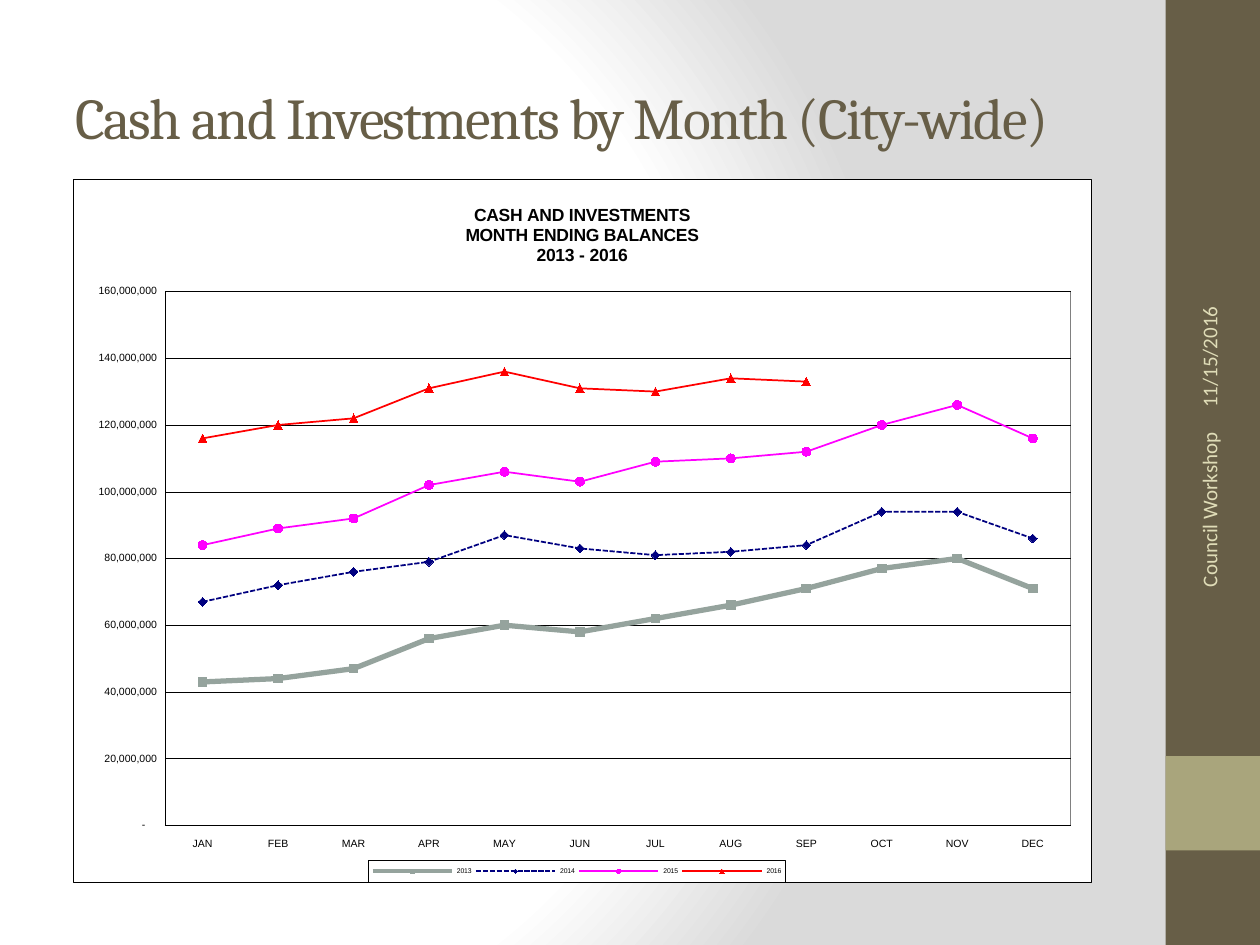
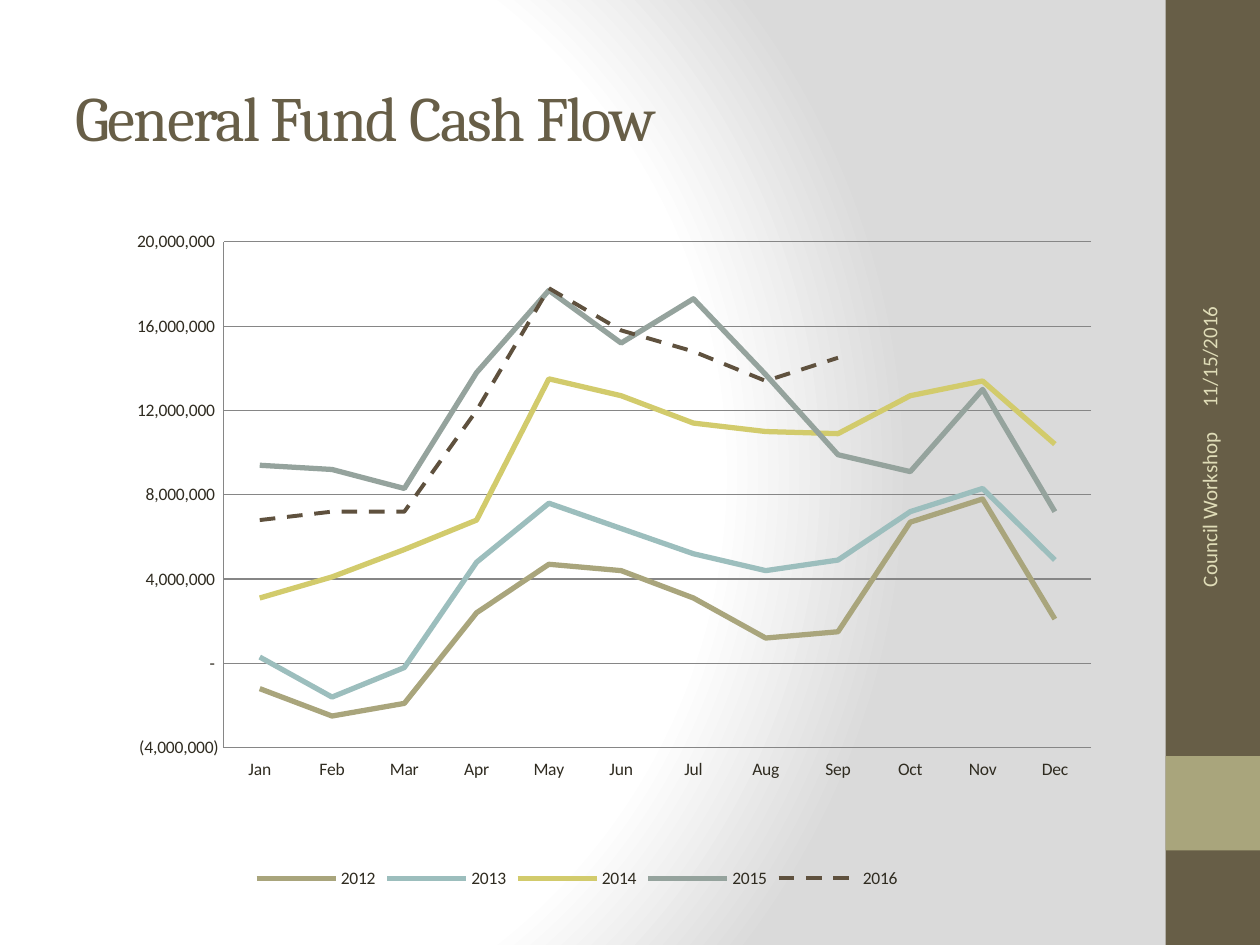
"""Builds two slides of city cash balances as line charts."""
from lxml import etree
from pptx import Presentation
from pptx.chart.data import CategoryChartData
from pptx.dml.color import RGBColor
from pptx.enum.chart import (XL_CHART_TYPE, XL_LEGEND_POSITION, XL_MARKER_STYLE,
                             XL_TICK_LABEL_POSITION, XL_TICK_MARK)
from pptx.enum.dml import MSO_LINE
from pptx.enum.shapes import MSO_SHAPE
from pptx.enum.text import MSO_ANCHOR, PP_ALIGN
from pptx.oxml.ns import qn
from pptx.util import Inches, Pt

BOTTOM = XL_LEGEND_POSITION.BOTTOM
LOW = XL_TICK_LABEL_POSITION.LOW
NO_TICK = XL_TICK_MARK.NONE
SHORT_DASH, DASH = MSO_LINE.SQUARE_DOT, MSO_LINE.DASH
SQUARE, DIAMOND = XL_MARKER_STYLE.SQUARE, XL_MARKER_STYLE.DIAMOND
CIRCLE, TRIANGLE = XL_MARKER_STYLE.CIRCLE, XL_MARKER_STYLE.TRIANGLE
MILLION = 1_000_000

BROWN, OLIVE, CREAM, INK = "675E47", "A9A57C", "DFDCB7", "2F2B20"
SAGE, BLACK, GRAY = "95A39D", "000000", "868686"
MONTHS = ["Jan", "Feb", "Mar", "Apr", "May", "Jun",
          "Jul", "Aug", "Sep", "Oct", "Nov", "Dec"]
BACKDROP_STOPS = [(0, "FFFFFF"), (75, "FFFFFF"), (100, "DADADA")]
BANDS = [((9.25, 0, 0.75, 7.5), BROWN), ((9.25, 6, 0.75, 0.75), OLIVE)]
SIDE_NOTES = [("11/15/2016", (8.26, 1.8, 2.67, 0.4), PP_ALIGN.LEFT),
              ("Council Workshop", (8.3, 4.43, 2.59, 0.4), PP_ALIGN.RIGHT)]

SLIDES = [
    {
        "title": "Cash and Investments by Month (City-wide)", "title_size": 33,
        "at": (0.58, 1.42, 8.08, 5.58), "type": XL_CHART_TYPE.LINE_MARKERS,
        "months": [month.upper() for month in MONTHS],
        "heading": ["CASH AND INVESTMENTS", "MONTH ENDING BALANCES", "2013 - 2016"],
        "font": "Arial", "color": BLACK, "size": 6, "legend_size": 3.9,
        "scale": (0, 160, 20), "grid": (BLACK, 0.25),
        "format": r'_(* #,##0_);_(* \(#,##0\);_(* "-"??_);_(@_)',
        "plot": (0.09, 0.16, 0.89, 0.76), "legend": (0.29, 0.97, 0.41, 0.03),
        "framed": True,
        "series": [
            ("2013", SAGE, 3, None, SQUARE,
             [43, 44, 47, 56, 60, 58, 62, 66, 71, 77, 80, 71]),
            ("2014", "000080", 1, SHORT_DASH, DIAMOND,
             [67, 72, 76, 79, 87, 83, 81, 82, 84, 94, 94, 86]),
            ("2015", "FF00FF", 1, None, CIRCLE,
             [84, 89, 92, 102, 106, 103, 109, 110, 112, 120, 126, 116]),
            ("2016", "FF0000", 1, None, TRIANGLE,
             [116, 120, 122, 131, 136, 131, 130, 134, 133]),
        ],
    },
    {
        "title": "General Fund Cash Flow", "title_size": 36,
        "at": (0.33, 1.59, 8.5, 5.5), "type": XL_CHART_TYPE.LINE,
        "months": MONTHS, "heading": [],
        "font": "Calibri", "color": INK, "size": 10, "legend_size": 10,
        "scale": (-4, 20, 4), "grid": (GRAY, 0.75),
        "format": r'_(* #,##0_);_(* \(#,##0\);_(* "-"_);_(@_)',
        "plot": (0.17, 0.06, 0.81, 0.73), "legend": None, "framed": False,
        "series": [
            ("2012", OLIVE, 3, None, None,
             [-1.2, -2.5, -1.9, 2.4, 4.7, 4.4, 3.1, 1.2, 1.5, 6.7, 7.8, 2.1]),
            ("2013", "9CBEBD", 3, None, None,
             [0.3, -1.6, -0.2, 4.8, 7.6, 6.4, 5.2, 4.4, 4.9, 7.2, 8.3, 4.9]),
            ("2014", "D2CB6C", 3, None, None,
             [3.1, 4.1, 5.4, 6.8, 13.5, 12.7, 11.4, 11, 10.9, 12.7, 13.4, 10.4]),
            ("2015", SAGE, 3, None, None,
             [9.4, 9.2, 8.3, 13.8, 17.7, 15.2, 17.3, 13.7, 9.9, 9.1, 13, 7.2]),
            ("2016", "5F513E", 2.25, DASH, None,
             [6.8, 7.2, 7.2, 12, 17.8, 15.8, 14.8, 13.4, 14.5]),
        ],
    },
]


def rgb(color):
    return RGBColor.from_string(color)


def style_font(font, name, size, color, bold=False):
    font.name, font.size, font.bold = name, Pt(size), bold
    font.color.rgb = rgb(color)


def style_line(line, color, width):
    line.color.rgb = rgb(color)
    line.width = Pt(width)


def add_node(parent, tag, **attributes):
    return etree.SubElement(parent, qn(tag), attributes)


def paint_backdrop(page):
    page.background.fill.solid()
    holder = page.element.find(".//" + qn("p:bgPr"))
    holder.remove(holder[0])
    gradient = etree.Element(qn("a:gradFill"), rotWithShape="1")
    stops = add_node(gradient, "a:gsLst")
    for position, color in BACKDROP_STOPS:
        stop = add_node(stops, "a:gs", pos=str(position * 1000))
        add_node(stop, "a:srgbClr", val=color)
    route = add_node(gradient, "a:path", path="circle")
    add_node(route, "a:fillToRect", l="20000", t="50000", r="100000", b="50000")
    holder.insert(0, gradient)


def add_text(page, text, at, font, size, color, align=PP_ALIGN.LEFT):
    box = page.shapes.add_textbox(*map(Inches, at))
    frame = box.text_frame
    frame.word_wrap = True
    frame.vertical_anchor = MSO_ANCHOR.MIDDLE
    para = frame.paragraphs[0]
    para.alignment = align
    span = para.add_run()
    span.text = text
    style_font(span.font, font, size, color)
    return box, span


def add_frame(page, title, size):
    paint_backdrop(page)
    for at, color in BANDS:
        band = page.shapes.add_shape(MSO_SHAPE.RECTANGLE, *map(Inches, at))
        band.shadow.inherit = False
        band.fill.solid()
        band.fill.fore_color.rgb = rgb(color)
        band.line.fill.background()
    box, span = add_text(page, title, (0.5, 0.3, 8.33, 1.25), "Cambria", size, BROWN)
    span.font._element.set("spc", "-100")
    for text, at, align in SIDE_NOTES:
        box, span = add_text(page, text, at, "Calibri", 12, CREAM, align)
        box.rotation = 270


def make_layout(rect, inner):
    layout = etree.Element(qn("c:layout"))
    manual = add_node(layout, "c:manualLayout")
    if inner:
        add_node(manual, "c:layoutTarget", val="inner")
    for tag in ("c:xMode", "c:yMode"):
        add_node(manual, tag, val="edge")
    for key, value in zip("xywh", rect):
        add_node(manual, "c:" + key, val=str(value))
    return layout


def make_border(color, fill=None):
    border = etree.Element(qn("c:spPr"))
    if fill:
        add_node(add_node(border, "a:solidFill"), "a:srgbClr", val=fill)
    else:
        add_node(border, "a:noFill")
    line = add_node(border, "a:ln", w=str(Pt(0.25)))
    add_node(add_node(line, "a:solidFill"), "a:srgbClr", val=color)
    return border


def drop_layout(parent):
    for old in parent.findall(qn("c:layout")):
        parent.remove(old)


def arrange_chart(chart, item):
    space = chart.element
    plot_area = space.find(".//" + qn("c:plotArea"))
    drop_layout(plot_area)
    plot_area.insert(0, make_layout(item["plot"], True))
    legend = chart.legend._element
    if item["legend"]:
        drop_layout(legend)
        legend.find(qn("c:legendPos")).addnext(make_layout(item["legend"], False))
    if item["framed"]:
        plot_area.append(make_border("808080"))
        legend.find(qn("c:overlay")).addnext(make_border(BLACK))
        space.find(qn("c:chart")).addnext(make_border(BLACK, "FFFFFF"))


def style_axes(chart, item):
    for axis in (chart.category_axis, chart.value_axis):
        axis.major_tick_mark = axis.minor_tick_mark = NO_TICK
        style_font(axis.tick_labels.font, item["font"], item["size"], item["color"])
        style_line(axis.format.line, *item["grid"])
    chart.category_axis.tick_label_position = LOW
    values = chart.value_axis
    values.minimum_scale, values.maximum_scale, values.major_unit = (
        number * MILLION for number in item["scale"])
    values.has_major_gridlines = True
    style_line(values.major_gridlines.format.line, *item["grid"])
    values.tick_labels.number_format = item["format"]
    values.tick_labels.number_format_is_linked = False


def style_series(series, color, width, dash, marker):
    series.smooth = False
    style_line(series.format.line, color, width)
    if dash is not None:
        series.format.line.dash_style = dash
    series.marker.style = XL_MARKER_STYLE.NONE if marker is None else marker
    if marker is not None:
        series.marker.size = 5
        series.marker.format.fill.solid()
        series.marker.format.fill.fore_color.rgb = rgb(color)
        style_line(series.marker.format.line, color, 0.75)


def add_balance_chart(page, item):
    data = CategoryChartData()
    data.categories = item["months"]
    for name, *look, amounts in item["series"]:
        gaps = [None] * (len(MONTHS) - len(amounts))
        data.add_series(name, [round(amount * MILLION) for amount in amounts] + gaps)
    chart = page.shapes.add_chart(item["type"], *map(Inches, item["at"]), data).chart
    style_font(chart.font, item["font"], item["size"], item["color"])
    chart.has_title = bool(item["heading"])
    if item["heading"]:
        frame = chart.chart_title.text_frame
        for index, text in enumerate(item["heading"]):
            para = frame.add_paragraph() if index else frame.paragraphs[0]
            span = para.add_run()
            span.text = text
            style_font(span.font, item["font"], 10, item["color"], True)
    chart.has_legend = True
    chart.legend.position = BOTTOM
    chart.legend.include_in_layout = False
    style_font(chart.legend.font, item["font"], item["legend_size"], item["color"])
    style_axes(chart, item)
    plot = chart.plots[0]
    plot.vary_by_categories = False
    for series, (name, *look, amounts) in zip(plot.series, item["series"]):
        style_series(series, *look)
    arrange_chart(chart, item)


def main():
    deck = Presentation()
    deck.slide_width, deck.slide_height = Inches(10), Inches(7.5)
    for item in SLIDES:
        page = deck.slides.add_slide(deck.slide_layouts[6])
        add_frame(page, item["title"], item["title_size"])
        add_balance_chart(page, item)
    deck.save("out.pptx")


if __name__ == "__main__":
    main()
